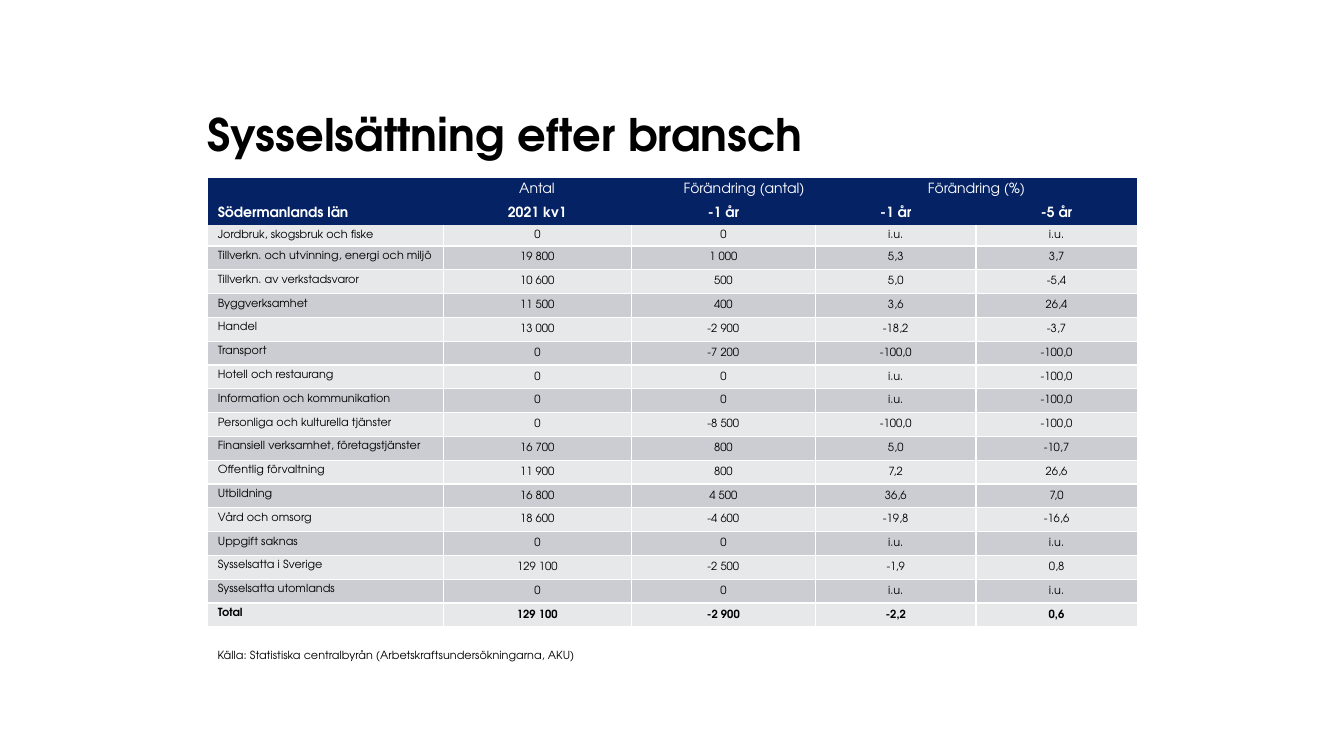
"""Build the slide with employment by industry in Södermanlands län."""
from dataclasses import dataclass

from lxml.etree import SubElement
from pptx import Presentation
from pptx.dml.color import RGBColor as Color
from pptx.enum.text import MSO_ANCHOR as Anchor, PP_ALIGN as Align
from pptx.oxml.ns import qn
from pptx.util import Inches, Pt

TITLE = "Sysselsättning efter bransch"
SOURCE = "Källa: Statistiska centralbyrån (Arbetskraftsundersökningarna, AKU)"
ROWS = [
    ("", "Antal\tFörändring (antal)", "", "Förändring (%)", ""),
    ("Södermanlands län", "2021 kv1", "-1 år", "-1 år", "-5 år"),
    ("Jordbruk, skogsbruk och fiske", "0", "0", "i.u.", "i.u."),
    ("Tillverkn. och utvinning, energi och miljö", "19 800", "1 000", "5,3", "3,7"),
    ("Tillverkn. av verkstadsvaror", "10 600", "500", "5,0", "-5,4"),
    ("Byggverksamhet", "11 500", "400", "3,6", "26,4"),
    ("Handel", "13 000", "-2 900", "-18,2", "-3,7"),
    ("Transport", "0", "-7 200", "-100,0", "-100,0"),
    ("Hotell och restaurang", "0", "0", "i.u.", "-100,0"),
    ("Information och kommunikation", "0", "0", "i.u.", "-100,0"),
    ("Personliga och kulturella tjänster", "0", "-8 500", "-100,0", "-100,0"),
    ("Finansiell verksamhet, företagstjänster", "16 700", "800", "5,0", "-10,7"),
    ("Offentlig förvaltning", "11 900", "800", "7,2", "26,6"),
    ("Utbildning", "16 800", "4 500", "36,6", "7,0"),
    ("Vård och omsorg", "18 600", "-4 600", "-19,8", "-16,6"),
    ("Uppgift saknas", "0", "0", "i.u.", "i.u."),
    ("Sysselsatta i Sverige", "129 100", "-2 500", "-1,9", "0,8"),
    ("Sysselsatta utomlands", "0", "0", "i.u.", "i.u."),
    ("Total", "129 100", "-2 900", "-2,2", "0,6"),
]
HEADER_ROWS = 2
LAST_ROW = len(ROWS) - 1
COLUMN_WIDTHS = (2.34, 1.86, 1.83, 1.59, 1.6)
LEFT, TABLE_TOP, TABLE_HEIGHT = 2.06, 1.77, 4.45
WIDTH = sum(COLUMN_WIDTHS)
TOP_HEIGHTS = [0.23, 0.23, 0.21]
BODY_COUNT = len(ROWS) - len(TOP_HEIGHTS)
BODY_HEIGHT = (TABLE_HEIGHT - sum(TOP_HEIGHTS)) / BODY_COUNT
ROW_HEIGHTS = TOP_HEIGHTS + [BODY_HEIGHT] * BODY_COUNT
SIDE_INSET, TOP_INSET, VALUE_INSET = 0.1, 0.05, 0.01
GROUP_INDENT, GROUP_TAB = 0.75, 1.63


@dataclass(frozen=True)
class Theme:
    font: str = "TeX Gyre Adventor"
    ink: str = "000000"
    paper: str = "FFFFFF"
    header: str = "052364"
    bands: tuple = ("E7E8EA", "CCCDD3")
    title_size: int = 32
    header_size: int = 10
    body_size: int = 8
    rule: int = 1


THEME = Theme()


def style(para, size, color, bold=False):
    for span in para.runs:
        span.font.name = THEME.font
        span.font.size = Pt(size)
        span.font.bold = bold
        span.font.color.rgb = Color.from_string(color)
    if not para.runs:
        SubElement(para._p, qn("a:endParaRPr"), sz=str(size * 100))


def add_text(page, text, top, height, size, bold=False, inset=0.0, anchor=Anchor.TOP):
    box = page.shapes.add_textbox(*map(Inches, (LEFT, top, WIDTH, height)))
    frame = box.text_frame
    frame.word_wrap = True
    frame.vertical_anchor = anchor
    frame.margin_left = frame.margin_right = Inches(inset)
    frame.margin_top = frame.margin_bottom = Inches(inset / 2)
    frame.text = text
    style(frame.paragraphs[0], size, THEME.ink, bold)


def set_borders(cell, row):
    properties = cell._tc.get_or_add_tcPr()
    for index, side in enumerate("LRTB"):
        line = SubElement(properties, qn(f"a:ln{side}"), w=str(Pt(THEME.rule)))
        properties.insert(index, line)
        if row < HEADER_ROWS or (row == HEADER_ROWS and side == "T"):
            SubElement(line, qn("a:noFill"))
        else:
            fill = SubElement(line, qn("a:solidFill"))
            SubElement(fill, qn("a:srgbClr"), val=THEME.paper)


def fill_cell(cell, text, row, column):
    header = row < HEADER_ROWS
    color = THEME.header if header else THEME.bands[row % 2]
    cell.fill.solid()
    cell.fill.fore_color.rgb = Color.from_string(color)
    set_borders(cell, row)
    value = row > 0 and column > 0
    middle = value or row == 1
    cell.margin_left = cell.margin_right = Inches(VALUE_INSET if value else SIDE_INSET)
    cell.margin_top = Inches(0 if middle else TOP_INSET)
    cell.margin_bottom = 0
    cell.vertical_anchor = Anchor.MIDDLE if middle else Anchor.TOP
    cell.text = text
    para = cell.text_frame.paragraphs[0]
    para.alignment = Align.CENTER if column else Align.LEFT
    if "\t" in text:
        para.alignment = Align.LEFT
        cell.margin_left = Inches(GROUP_INDENT)
        tabs = SubElement(para._p.get_or_add_pPr(), qn("a:tabLst"))
        SubElement(tabs, qn("a:tab"), pos=str(Inches(GROUP_TAB)), algn="l")
    style(para, THEME.header_size if header else THEME.body_size,
          THEME.paper if header else THEME.ink, row in (1, LAST_ROW))


def add_industry_table(page):
    frame = page.shapes.add_table(
        len(ROWS), len(COLUMN_WIDTHS),
        *map(Inches, (LEFT, TABLE_TOP, WIDTH, TABLE_HEIGHT)))
    table = frame.table
    table.first_row = table.horz_banding = False
    for column, width in zip(table.columns, COLUMN_WIDTHS):
        column.width = Inches(width)
    for row, (height, texts) in enumerate(zip(ROW_HEIGHTS, ROWS)):
        table.rows[row].height = Inches(height)
        for column, text in enumerate(texts):
            fill_cell(table.cell(row, column), text, row, column)
    for column in (1, 3):
        table.cell(0, column).merge(table.cell(0, column + 1))


def main():
    deck = Presentation()
    deck.slide_width, deck.slide_height = Inches(13.33), Inches(7.5)
    page = deck.slides.add_slide(deck.slide_layouts[6])
    add_text(page, TITLE, 0.37, 1.22, THEME.title_size, bold=True, anchor=Anchor.BOTTOM)
    add_industry_table(page)
    add_text(page, SOURCE, 6.38, 0.24, THEME.body_size, inset=SIDE_INSET)
    deck.save("out.pptx")


if __name__ == "__main__":
    main()
